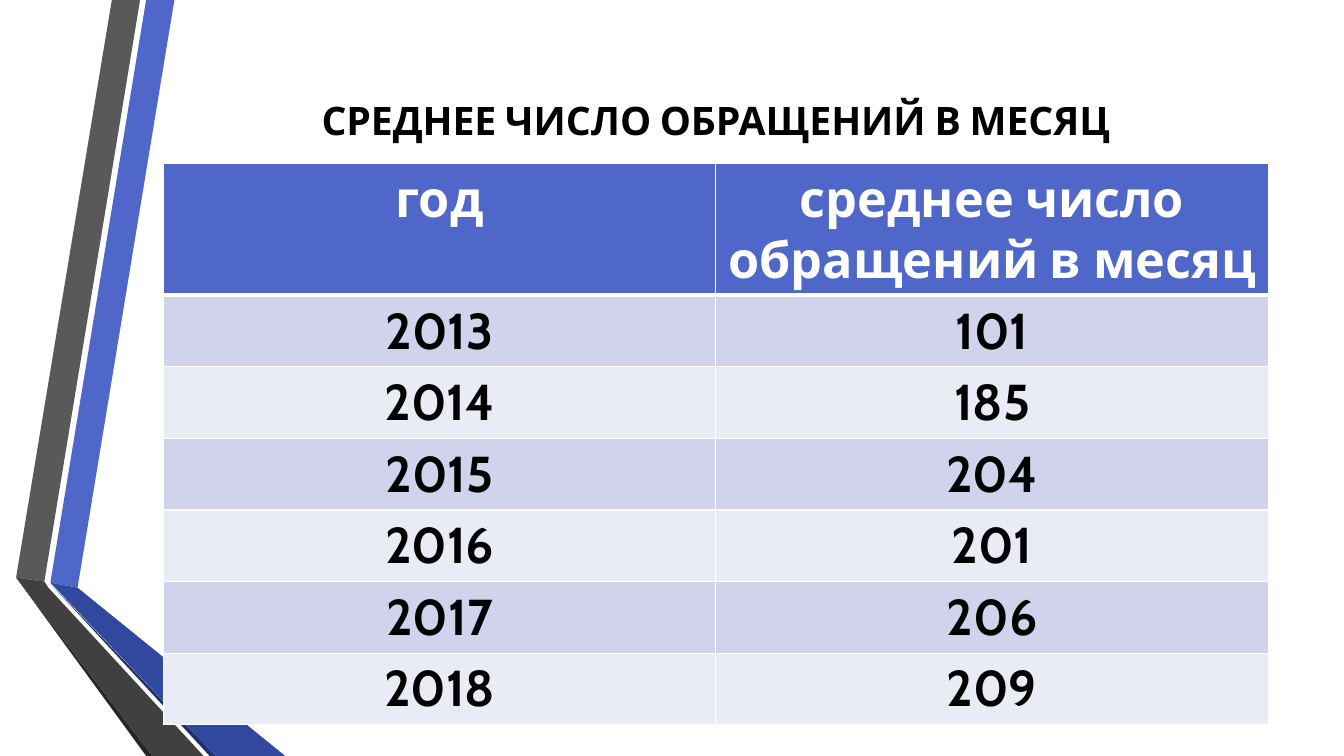
from dataclasses import dataclass

import lxml.etree
import pptx
import pptx.dml.color
import pptx.enum.text
import pptx.oxml.ns
import pptx.util

Inches = pptx.util.Inches
Pt = pptx.util.Pt

FONT = "Cabin"
BLACK, WHITE, BLUE = "000000", "FFFFFF", "4E67C8"
ROW_FILLS = ("E9EBF5", "D0D3EB")
LEFT, WIDTH = 1.62, 10.96
HEADER_HEIGHT, ROW_HEIGHT = 1.31, 0.71


@dataclass(frozen=True)
class Ribbon:
    color: str
    points: tuple[tuple[float, float], ...]


RIBBONS = (
    Ribbon(BLUE, ((0.5, 5.78), (0.77, 5.83), (1.73, 0), (1.45, 0))),
    Ribbon("595959", ((1.39, 0), (1.11, 0), (0.16, 5.73), (0.44, 5.77))),
    Ribbon("262626", ((0.16, 5.73), (1.45, 7.5), (1.51, 7.5))),
    Ribbon("21306A", ((0.5, 5.79), (2.08, 7.5), (2.14, 7.5))),
    Ribbon("31489F", ((0.5, 5.78), (2.14, 7.5), (2.83, 7.5), (0.77, 5.83))),
    Ribbon("404040", ((2.02, 7.5), (0.48, 5.83), (0.44, 5.77), (0.16, 5.73), (1.51, 7.5))),
)

HEADINGS = ("год", "среднее число обращений в месяц")
MONTHLY_REQUESTS = {
    "2013": 101,
    "2014": 185,
    "2015": 204,
    "2016": 201,
    "2017": 206,
    "2018": 209,
}


def rgb(color: str) -> pptx.dml.color.RGBColor:
    return pptx.dml.color.RGBColor.from_string(color)


def draw_ribbon(slide, ribbon: Ribbon) -> None:
    start, *rest = [(Inches(x), Inches(y)) for x, y in ribbon.points]
    builder = slide.shapes.build_freeform(*start)
    builder.add_line_segments(rest, close=True)
    shape = builder.convert_to_shape()
    shape.shadow.inherit = False
    shape.fill.solid()
    shape.fill.fore_color.rgb = rgb(ribbon.color)
    shape.line.fill.background()


def write(frame, text: str, size: int, color: str) -> None:
    """Put one bold centred paragraph into a text frame."""
    frame.text = text
    paragraph = frame.paragraphs[0]
    paragraph.alignment = pptx.enum.text.PP_ALIGN.CENTER
    paragraph.font.name = FONT
    paragraph.font.size = Pt(size)
    paragraph.font.bold = True
    paragraph.font.color.rgb = rgb(color)


def set_border(cell, side: str, width: float) -> None:
    qn = pptx.oxml.ns.qn
    properties = cell._tc.get_or_add_tcPr()
    line = lxml.etree.SubElement(properties, qn(f"a:ln{side}"), w=str(Pt(width)))
    fill = lxml.etree.SubElement(line, qn("a:solidFill"))
    lxml.etree.SubElement(fill, qn("a:srgbClr"), val=WHITE)


def draw_title(slide) -> None:
    title = slide.shapes.add_textbox(Inches(LEFT), Inches(0.75), Inches(WIDTH), Inches(0.87))
    title.text_frame.word_wrap = True
    title.text_frame.vertical_anchor = pptx.enum.text.MSO_ANCHOR.MIDDLE
    write(title.text_frame, "СРЕДНЕЕ ЧИСЛО ОБРАЩЕНИЙ В МЕСЯЦ", 28, BLACK)


def draw_requests(slide) -> None:
    rows = [HEADINGS, *MONTHLY_REQUESTS.items()]
    height = HEADER_HEIGHT + ROW_HEIGHT * len(MONTHLY_REQUESTS)
    requests = slide.shapes.add_table(
        len(rows), len(HEADINGS), Inches(LEFT), Inches(1.62), Inches(WIDTH), Inches(height)
    ).table
    for r, values in enumerate(rows):
        is_header = r == 0
        requests.rows[r].height = Inches(HEADER_HEIGHT if is_header else ROW_HEIGHT)
        for c, value in enumerate(values):
            cell = requests.cell(r, c)
            write(cell.text_frame, str(value), 36, WHITE if is_header else BLACK)
            for side in "LRTB":
                header_edge = (r, side) in ((0, "B"), (1, "T"))
                set_border(cell, side, 3 if header_edge else 1)
            cell.fill.solid()
            cell.fill.fore_color.rgb = rgb(BLUE if is_header else ROW_FILLS[r % 2])


def main() -> None:
    presentation = pptx.Presentation()
    presentation.slide_width = Inches(13.33)
    presentation.slide_height = Inches(7.5)
    slide = presentation.slides.add_slide(presentation.slide_layouts[6])
    for ribbon in RIBBONS:
        draw_ribbon(slide, ribbon)
    draw_title(slide)
    draw_requests(slide)
    presentation.save("out.pptx")


if __name__ == "__main__":
    main()
